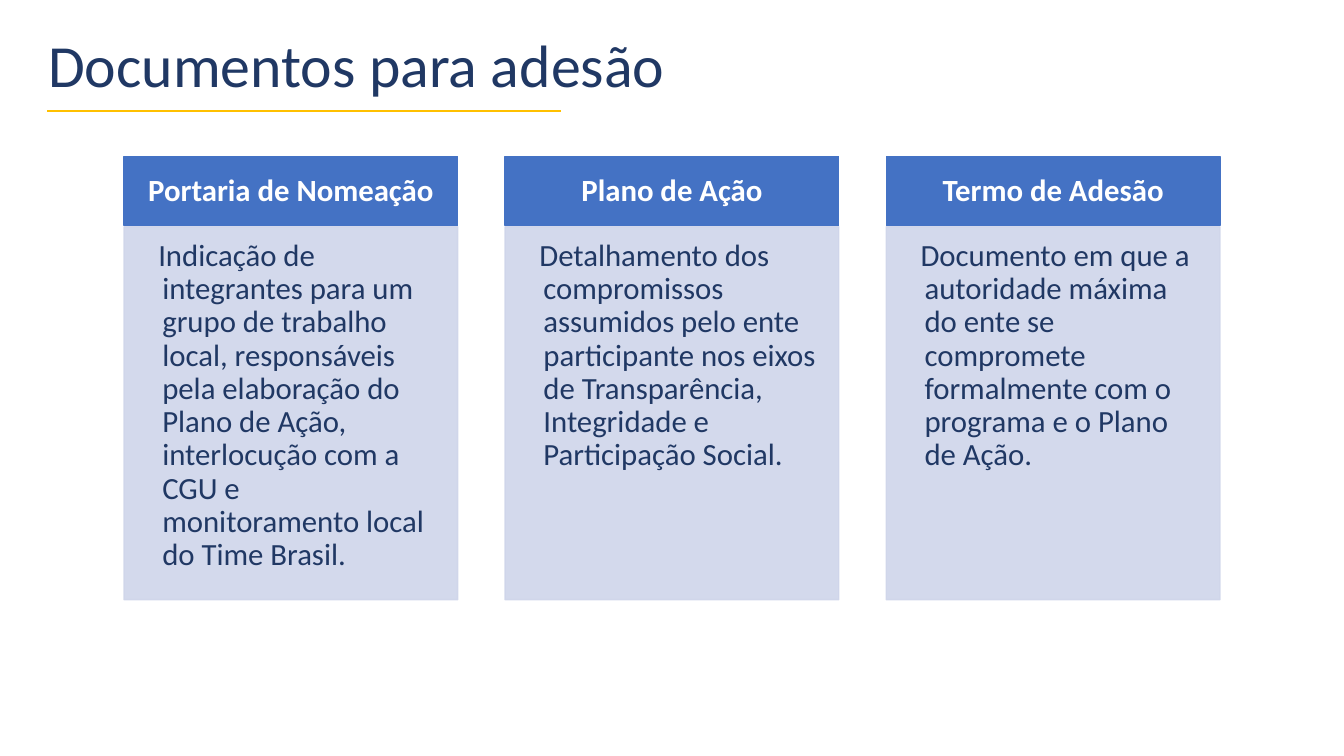
from lxml import etree
from pptx import Presentation
from pptx.dml.color import RGBColor
from pptx.enum.shapes import MSO_CONNECTOR, MSO_SHAPE
from pptx.enum.text import MSO_ANCHOR, PP_ALIGN
from pptx.oxml.ns import qn
from pptx.util import Inches, Pt

RECTANGLE, STRAIGHT = MSO_SHAPE.RECTANGLE, MSO_CONNECTOR.STRAIGHT
TOP, MIDDLE = MSO_ANCHOR.TOP, MSO_ANCHOR.MIDDLE
LEFT, CENTER = PP_ALIGN.LEFT, PP_ALIGN.CENTER

# Content
TITLE = "Documentos para adesão"
DOCUMENTS = [
    ("Portaria de Nomeação",
     "Indicação de integrantes para um grupo de trabalho local, responsáveis "
     "pela elaboração do Plano de Ação, interlocução com a CGU e "
     "monitoramento local do Time Brasil."),
    ("Plano de Ação",
     "Detalhamento dos compromissos assumidos pelo ente participante nos "
     "eixos de Transparência, Integridade e Participação Social."),
    ("Termo de Adesão",
     "Documento em que a autoridade máxima do ente se compromete formalmente "
     "com o programa e o Plano de Ação."),
]

# Formats
NAVY, BLUE, PALE, WHITE, GOLD = "203864", "4472C4", "CFD5EA", "FFFFFF", "FFC000"
TITLE_FORMAT = dict(size=42.7, color=NAVY, bold=False, align=LEFT, anchor=MIDDLE,
                    insets=(0.1, 0.05, 0.1, 0.05))
HEADING_FORMAT = dict(size=22, color=WHITE, bold=True, align=CENTER, anchor=MIDDLE,
                      insets=(0.17, 0.1, 0.17, 0.1))
DETAIL_FORMAT = dict(size=22, color=NAVY, bold=False, align=LEFT, anchor=TOP,
                     insets=(0.13, 0.13, 0.17, 0.19))

# Layout
CARD_LEFT, CARD_TOP, CARD_WIDTH, CARD_STEP = 1.23, 1.55, 3.31, 3.78
HEADING_HEIGHT, DETAIL_TOP, DETAIL_HEIGHT = 0.69, 2.25, 3.7


def rgb(color):
    return RGBColor.from_string(color)


def write(shape, text, style):
    frame = shape.text_frame
    left, top, right, bottom = map(Inches, style["insets"])
    frame_format = dict(word_wrap=True, vertical_anchor=style["anchor"],
                        margin_left=left, margin_top=top,
                        margin_right=right, margin_bottom=bottom)
    for name, value in frame_format.items():
        setattr(frame, name, value)
    paragraph = frame.paragraphs[0]
    paragraph.text = text
    paragraph.alignment = style["align"]
    paragraph.line_spacing = 0.9
    font = paragraph.runs[0].font
    for name, value in dict(name="Calibri", size=Pt(style["size"]),
                            bold=style["bold"]).items():
        setattr(font, name, value)
    font.color.rgb = rgb(style["color"])
    return paragraph


def add_panel(left, top, height, color, opacity=100):
    panel = slide.shapes.add_shape(RECTANGLE, Inches(left), Inches(top),
                                   Inches(CARD_WIDTH), Inches(height))
    panel.shadow.inherit = False
    panel.fill.solid()
    panel.fill.fore_color.rgb = panel.line.color.rgb = rgb(color)
    panel.line.width = Pt(1)
    if opacity < 100:
        for tone in panel.element.spPr.iter(qn("a:srgbClr")):
            etree.SubElement(tone, qn("a:alpha"), val=str(opacity * 1000))
    return panel


presentation = Presentation()
presentation.slide_width, presentation.slide_height = Inches(13.33), Inches(7.5)
slide = presentation.slides.add_slide(presentation.slide_layouts[6])

# Document cards
for column, (heading, detail) in enumerate(DOCUMENTS):
    left = CARD_LEFT + column * CARD_STEP
    write(add_panel(left, CARD_TOP, HEADING_HEIGHT, BLUE), heading, HEADING_FORMAT)
    description = write(add_panel(left, DETAIL_TOP, DETAIL_HEIGHT, PALE, 90),
                        detail, DETAIL_FORMAT)
    # First line starts slightly left of the lines below it
    properties = description._p.get_or_add_pPr()
    properties.set("marL", str(Inches(0.25)))
    properties.set("indent", str(Inches(-0.04)))

# Title and its rule
title = slide.shapes.add_textbox(Inches(0.38), Inches(0.26), Inches(10), Inches(0.84))
write(title, TITLE, TITLE_FORMAT)
rule = slide.shapes.add_connector(STRAIGHT, Inches(0.47), Inches(1.1),
                                  Inches(5.56), Inches(1.1))
rule.line.color.rgb = rgb(GOLD)
rule.line.width = Pt(1)
etree.SubElement(rule.element.spPr, qn("a:effectLst"))

presentation.save("out.pptx")
